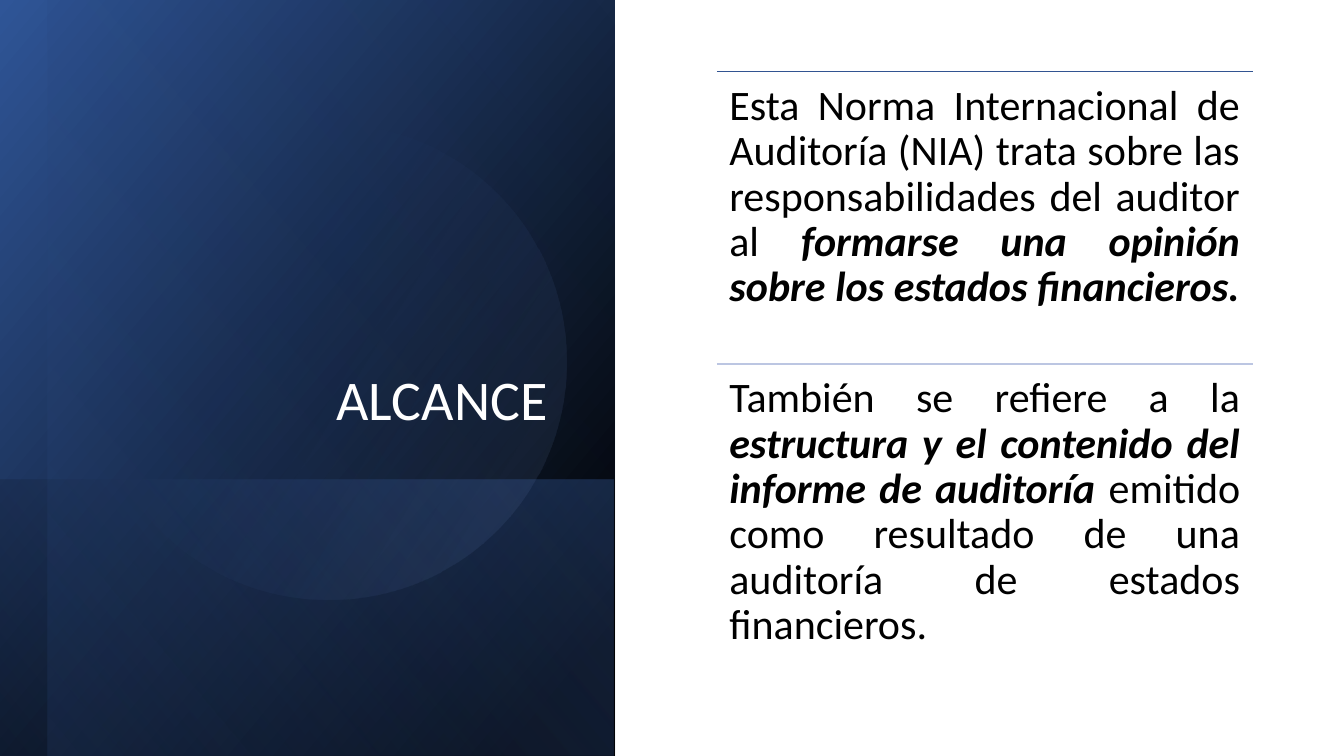
from lxml import etree
from pptx import Presentation
from pptx.dml.color import RGBColor
from pptx.enum.shapes import MSO_CONNECTOR, MSO_SHAPE
from pptx.enum.text import MSO_ANCHOR, MSO_AUTO_SIZE, PP_ALIGN
from pptx.oxml import parse_xml
from pptx.oxml.ns import nsdecls, qn
from pptx.util import Pt

RECTANGLE, OVAL = MSO_SHAPE.RECTANGLE, MSO_SHAPE.OVAL
STRAIGHT = MSO_CONNECTOR.STRAIGHT
TOP, BOTTOM = MSO_ANCHOR.TOP, MSO_ANCHOR.BOTTOM
RIGHT, JUSTIFY = PP_ALIGN.RIGHT, PP_ALIGN.JUSTIFY
NO_AUTOFIT = MSO_AUTO_SIZE.NONE

BLACK = RGBColor(0x00, 0x00, 0x00)
WHITE = RGBColor(0xFF, 0xFF, 0xFF)
BLUE = RGBColor(0x44, 0x72, 0xC4)
DARK_BLUE = RGBColor(0x2F, 0x55, 0x97)
LIGHT_BLUE = RGBColor(0x8F, 0xAA, 0xDC)
RULE_BLUE = RGBColor(0x32, 0x54, 0x91)
RULE_PALE = RGBColor(0xBC, 0xC6, 0xE2)
FONT = "Calibri"


def set_gradient(shape, angle, stops):
    """Fill with a linear gradient; stops are (position %, colour, opacity %)."""
    stop_xml = "".join(
        f'<a:gs pos="{position * 1000}"><a:srgbClr val="{color}">'
        f'<a:alpha val="{opacity * 1000}"/></a:srgbClr></a:gs>'
        for position, color, opacity in stops)
    gradient = parse_xml(
        f'<a:gradFill {nsdecls("a")} rotWithShape="1"><a:gsLst>{stop_xml}</a:gsLst>'
        f'<a:lin ang="{angle * 60000}" scaled="0"/></a:gradFill>')
    properties = shape._element.spPr
    properties.find(qn("a:prstGeom")).addnext(gradient)


def format_run(run, size, color):
    run.font.name = FONT
    run.font.size = Pt(size)
    run.font.color.rgb = color


presentation = Presentation()
presentation.slide_width, presentation.slide_height = Pt(960), Pt(540)
slide = presentation.slides.add_slide(presentation.slide_layouts[5])

# Left panel: kind, box, rotation, flipped, gradient angle, gradient stops
panel_layers = [
    (RECTANGLE, (-50.4, 50.4, 540, 439.2), 90, True, 50,
     [(8, BLACK, 100), (100, DARK_BLUE, 100)]),
    (RECTANGLE, (120.24, 221.76, 197.28, 439.2), 90, True, 130,
     [(2, BLUE, 29), (100, BLACK, 30)]),
    (RECTANGLE, (-33.12, 66.96, 540, 405.36), 90, True, 130,
     [(0, BLACK, 0), (99, BLUE, 11)]),
    (OVAL, (64.8, 88.56, 339.84, 339.84), 101.6, False, 290,
     [(39, BLUE, 0), (100, LIGHT_BLUE, 15)]),
]
for kind, box, rotation, flipped, angle, stops in panel_layers:
    layer = slide.shapes.add_shape(kind, *map(Pt, box))
    layer.shadow.inherit = False
    layer.line.fill.background()
    layer.rotation = rotation
    if flipped:
        layer._element.spPr.find(qn("a:xfrm")).set("flipH", "1")
    set_gradient(layer, angle, stops)

# Title, brought in front of the panel
title = slide.shapes.title
title.left, title.top, title.width, title.height = map(Pt, (64.8, 46.08, 333.36, 266.4))
slide.shapes._spTree.append(title._element)
title_frame = title.text_frame
title_frame.text = "ALCANCE"
title_frame.auto_size = NO_AUTOFIT
title_frame.word_wrap = True
title_frame.vertical_anchor = BOTTOM
title_paragraph = title_frame.paragraphs[0]
title_paragraph.alignment = RIGHT
title_paragraph.line_spacing = 0.9
format_run(title_paragraph.runs[0], 40, WHITE)

# Scope statements, each under a rule: top, height, rule colour, (text, emphasis)
LEFT, WIDTH = 512, 383
statements = [
    (51, 209, RULE_BLUE, [
        ("Esta Norma Internacional de Auditoría (NIA) trata sobre las "
         "responsabilidades del auditor al ", False),
        ("formarse una opinión sobre los estados financieros. ", True)]),
    (260, 228, RULE_PALE, [
        ("También se refiere a la ", False),
        ("estructura y el contenido del informe de auditoría ", True),
        ("emitido como resultado de una auditoría de estados financieros.", False)]),
]
for top, height, rule_color, parts in statements:
    rule = slide.shapes.add_connector(
        STRAIGHT, Pt(LEFT), Pt(top), Pt(LEFT + WIDTH), Pt(top))
    rule.line.color.rgb = rule_color
    rule.line.width = Pt(1)
    etree.SubElement(rule._element.spPr, qn("a:effectLst"))

    statement = slide.shapes.add_textbox(Pt(LEFT), Pt(top), Pt(WIDTH), Pt(height))
    frame = statement.text_frame
    frame.word_wrap = True
    frame.vertical_anchor = TOP
    frame.margin_left = frame.margin_right = Pt(9)
    frame.margin_top = frame.margin_bottom = Pt(9)
    paragraph = frame.paragraphs[0]
    paragraph.alignment = JUSTIFY
    paragraph.line_spacing = 0.9
    for text, emphasis in parts:
        run = paragraph.add_run()
        run.text = text
        format_run(run, 30, BLACK)
        run.font.bold = run.font.italic = emphasis

presentation.save("out.pptx")
